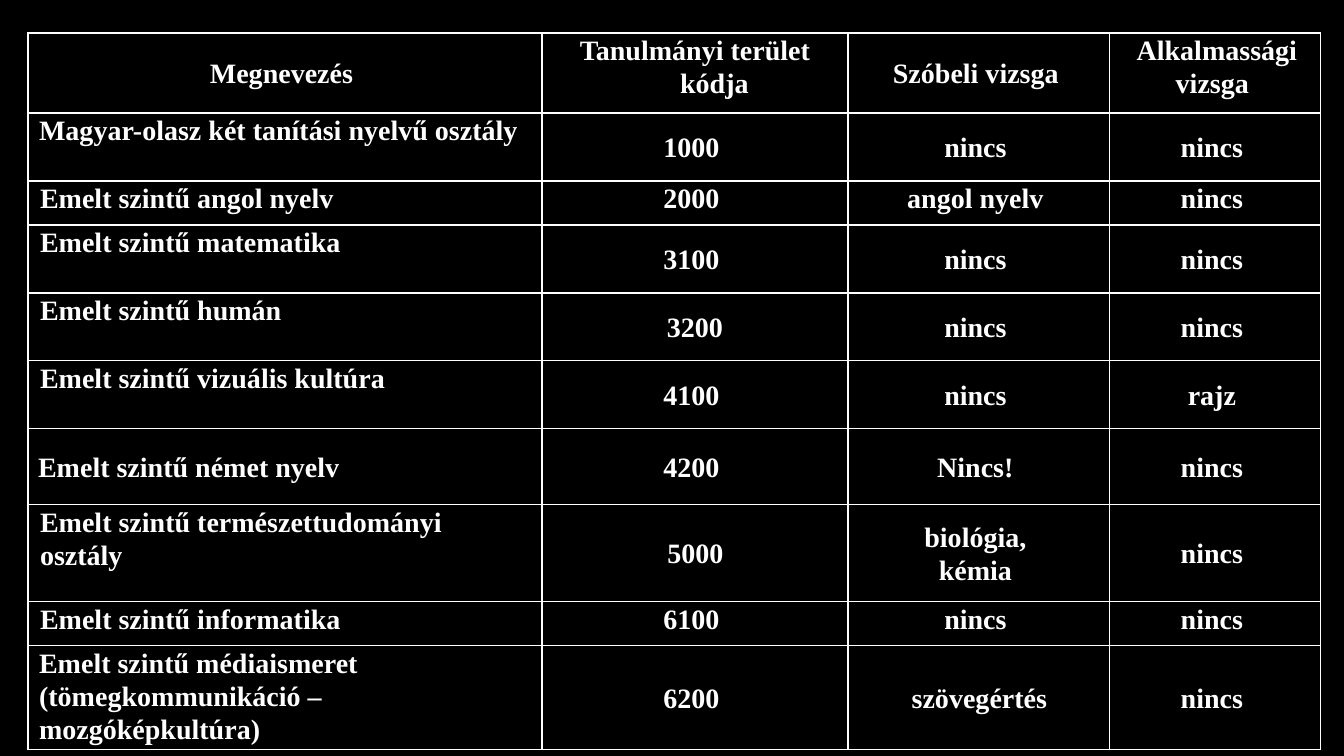
from lxml import etree
from pptx import Presentation
from pptx.dml.color import RGBColor
from pptx.enum.text import MSO_ANCHOR, PP_ALIGN
from pptx.oxml.ns import qn
from pptx.util import Pt

TOP, MIDDLE = MSO_ANCHOR.TOP, MSO_ANCHOR.MIDDLE
LEFT, CENTER = PP_ALIGN.LEFT, PP_ALIGN.CENTER

EMU_PER_PX = 914400 / 100.8
COLORS = {"background": "000000", "text": "FFFFFF", "border": "FFFFFF"}
FONT = "Times New Roman"
FONT_SIZE = 20
SIDE_MARGIN = 7
ONE_LINE_HEIGHT = 44

TABLE_LEFT, TABLE_TOP = 28, 33
COLUMN_WIDTHS = [514, 306, 262, 211]
# Row height, then the texts of the row; the space after a centred text shifts it left.
ROWS = [
    (80, "Megnevezés ", "Tanulmányi terület kódja ", "Szóbeli vizsga ", "Alkalmassági vizsga "),
    (68, "Magyar-olasz két tanítási nyelvű osztály", "1000 ", "nincs ", "nincs "),
    (44, "Emelt szintű angol nyelv", "2000 ", "angol nyelv ", "nincs "),
    (68, "Emelt szintű matematika", "3100 ", "nincs ", "nincs "),
    (68, "Emelt szintű humán", "3200", "nincs ", "nincs "),
    (68, "Emelt szintű vizuális kultúra", "4100 ", "nincs ", "rajz "),
    (76, "Emelt szintű német nyelv", "4200 ", "Nincs! ", "nincs "),
    (97, "Emelt szintű természettudományi\nosztály", " 5000 ", "biológia, \nkémia ", "nincs "),
    (44, "Emelt szintű informatika", "6100 ", "nincs ", "nincs "),
    (104, "Emelt szintű médiaismeret\n(tömegkommunikáció – mozgóképkultúra)",
     "6200 ", "szövegértés ", "nincs "),
]
# (row, column): left margin and first-line indent
NAME_INDENT = (5, 0)
INDENTS = {
    (0, 0): (0, 0), (0, 1): (46, -46), (0, 2): (1, 0), (0, 3): (1, 2),
    (1, 0): (33, -29), (6, 0): (3, 0), (7, 1): (1, 0),
    (9, 0): (4, 0), (9, 2): (8, 0),
}
TOP_HEADERS = (1, 3)
MIDDLE_NAME_ROW = 6


def px(length):
    return round(length * EMU_PER_PX)


def rgb(name):
    return RGBColor.from_string(COLORS[name])


def cell_anchor(row, column):
    if row == 0:
        return TOP if column in TOP_HEADERS else MIDDLE
    if ROWS[row][0] == ONE_LINE_HEIGHT:
        return TOP
    return TOP if column == 0 and row != MIDDLE_NAME_ROW else MIDDLE


def set_borders(cell):
    """Draw all four sides; the lines must come before the fill in the cell properties."""
    properties = cell._tc.get_or_add_tcPr()
    for position, side in enumerate(("a:lnL", "a:lnR", "a:lnT", "a:lnB")):
        line = etree.Element(qn(side), w=str(Pt(1)))
        fill = etree.SubElement(line, qn("a:solidFill"))
        etree.SubElement(fill, qn("a:srgbClr"), val=COLORS["border"])
        properties.insert(position, line)


def format_paragraph(paragraph, alignment, indent):
    paragraph.alignment = alignment
    paragraph.line_spacing = 1.07
    margin, first_line = indent
    properties = paragraph._p.get_or_add_pPr()
    properties.set("marL", str(px(margin)))
    properties.set("indent", str(px(first_line)))
    for run in paragraph.runs:
        run.font.name = FONT
        run.font.size = Pt(FONT_SIZE)
        run.font.bold = True
        run.font.color.rgb = rgb("text")


def fill_cell(cell, text, row, column):
    cell.text_frame.text = text
    cell.vertical_anchor = cell_anchor(row, column)
    cell.margin_left = cell.margin_right = px(SIDE_MARGIN)
    cell.margin_top = cell.margin_bottom = 0
    cell.fill.background()
    set_borders(cell)
    is_name = column == 0 and row > 0
    indent = INDENTS.get((row, column), NAME_INDENT if is_name else (0, 0))
    for paragraph in cell.text_frame.paragraphs:
        format_paragraph(paragraph, LEFT if is_name else CENTER, indent)


def add_class_table(slide):
    heights = [height for height, *_ in ROWS]
    shape = slide.shapes.add_table(
        len(ROWS), len(COLUMN_WIDTHS), px(TABLE_LEFT), px(TABLE_TOP),
        px(sum(COLUMN_WIDTHS)), px(sum(heights)))
    table = shape.table
    table.first_row = table.horz_banding = False
    for column, width in enumerate(COLUMN_WIDTHS):
        table.columns[column].width = px(width)
    for row, (height, *texts) in enumerate(ROWS):
        table.rows[row].height = px(height)
        for column, text in enumerate(texts):
            fill_cell(table.cell(row, column), text, row, column)


def main():
    presentation = Presentation()
    presentation.slide_width, presentation.slide_height = px(1344), px(756)
    slide = presentation.slides.add_slide(presentation.slide_layouts[6])
    background = slide.background.fill
    background.solid()
    background.fore_color.rgb = rgb("background")
    add_class_table(slide)
    presentation.save("out.pptx")


if __name__ == "__main__":
    main()
